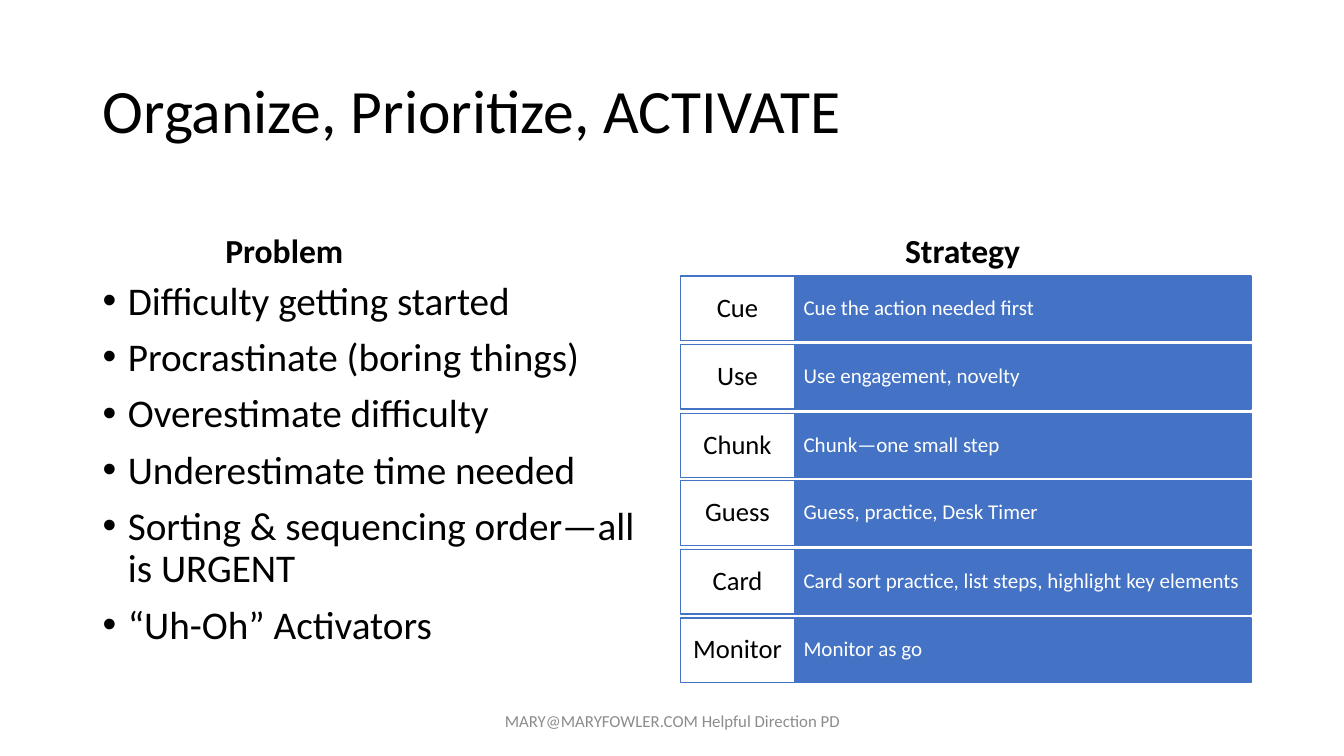
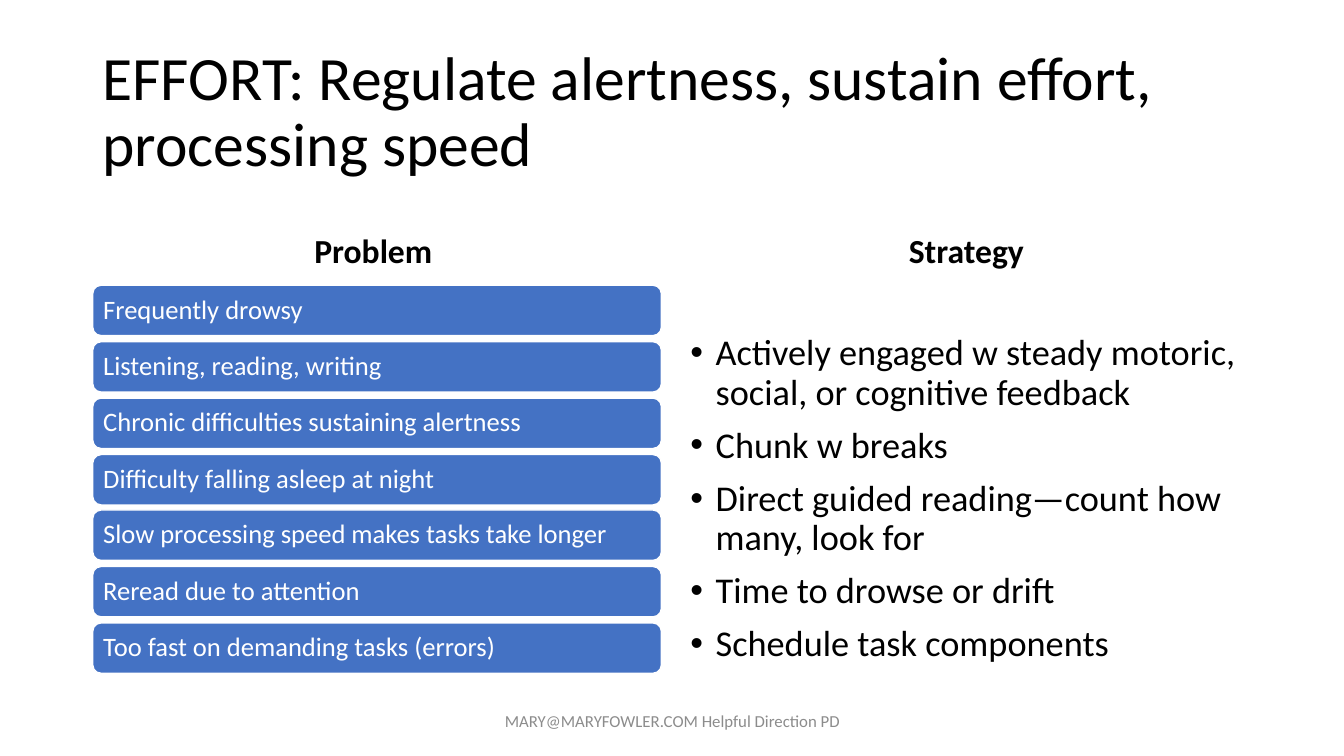
from lxml import etree
from pptx import Presentation
from pptx.dml.color import RGBColor
from pptx.enum.shapes import MSO_SHAPE
from pptx.enum.text import MSO_ANCHOR, PP_ALIGN
from pptx.oxml.ns import qn
from pptx.util import Emu, Pt

BLACK = RGBColor(0x00, 0x00, 0x00)
WHITE = RGBColor(0xFF, 0xFF, 0xFF)
BLUE = RGBColor(0x44, 0x72, 0xC4)
GRAY = RGBColor(0x8C, 0x8C, 0x8C)

LEFT, CENTER = PP_ALIGN.LEFT, PP_ALIGN.CENTER
TOP, MIDDLE, BOTTOM = MSO_ANCHOR.TOP, MSO_ANCHOR.MIDDLE, MSO_ANCHOR.BOTTOM
RECTANGLE, ROUNDED = MSO_SHAPE.RECTANGLE, MSO_SHAPE.ROUNDED_RECTANGLE

FONT = "Calibri"
FOOTER = "MARY@MARYFOWLER.COM Helpful Direction PD"
EMU_PER_PX = 9144
LEFT_COLUMN, LEFT_WIDTH = 92, 564
RIGHT_COLUMN, RIGHT_WIDTH = 675, 567
BODY_TOP, BODY_BOTTOM = 274, 677

ACTIVATION_PROBLEMS = [
    "Difficulty getting started",
    "Procrastinate (boring things)",
    "Overestimate difficulty",
    "Underestimate time needed",
    "Sorting & sequencing order—all is URGENT",
    "“Uh-Oh” Activators",
]
ACTIVATION_STRATEGIES = [
    ("Cue", "Cue the action needed first"),
    ("Use", "Use engagement, novelty"),
    ("Chunk", "Chunk—one small step"),
    ("Guess", "Guess, practice, Desk Timer"),
    ("Card", "Card sort practice, list steps, highlight key elements"),
    ("Monitor", "Monitor as go"),
]
EFFORT_PROBLEMS = [
    "Frequently drowsy",
    "Listening, reading, writing",
    "Chronic difficulties sustaining alertness",
    "Difficulty falling asleep at night",
    "Slow processing speed makes tasks take longer",
    "Reread due to attention",
    "Too fast on demanding tasks (errors)",
]
EFFORT_STRATEGIES = [
    "Actively engaged w steady motoric, social, or cognitive feedback",
    "Chunk w breaks",
    "Direct guided reading—count how many, look for",
    "Time to drowse or drift",
    "Schedule task components",
]


def px(length):
    return Emu(length * EMU_PER_PX)


def spread(first, last, count):
    return [first + round((last - first) * index / (count - 1)) for index in range(count)]


class Deck:
    """Holds the shared style and the slide being built."""

    def __init__(self):
        self.presentation = Presentation()
        self.presentation.slide_width = px(1333)
        self.presentation.slide_height = px(750)
        self.slide = None

    def new_slide(self, title):
        self.slide = self.presentation.slides.add_slide(self.presentation.slide_layouts[6])
        self.text((92, 40, 1150, 145), [title], 44)
        self.text((442, 695, 450, 40), [FOOTER], 12, GRAY, CENTER, line_spacing=1.0)

    def fill_frame(self, frame, lines, size, color, align, anchor, line_spacing=0.9, bold=False):
        frame.word_wrap = True
        frame.vertical_anchor = anchor
        for index, line in enumerate(lines):
            paragraph = frame.add_paragraph() if index else frame.paragraphs[0]
            paragraph.alignment = align
            paragraph.line_spacing = line_spacing
            run = paragraph.add_run()
            run.text = line
            run.font.name = FONT
            run.font.size = Pt(size)
            run.font.bold = bold
            run.font.color.rgb = color

    def text(self, box, lines, size, color=BLACK, align=LEFT, anchor=MIDDLE, **style):
        frame = self.slide.shapes.add_textbox(*map(px, box)).text_frame
        self.fill_frame(frame, lines, size, color, align, anchor, **style)
        return frame

    def heading(self, left, width, label):
        self.text((left, 184, width, 90), [label], 24, BLACK, CENTER, BOTTOM, bold=True)

    def bullets(self, left, top, width, lines, size):
        frame = self.text((left, top, width, BODY_BOTTOM - top), lines, size, anchor=TOP)
        for paragraph in frame.paragraphs:
            paragraph.space_before = Pt(10)
            properties = paragraph._p.get_or_add_pPr()
            properties.set("marL", str(px(25)))
            properties.set("indent", str(px(-25)))
            etree.SubElement(properties, qn("a:buFont")).set("typeface", "Arial")
            etree.SubElement(properties, qn("a:buChar")).set("char", "•")

    def block(self, kind, box, label, size, color, fill, line, inset, align=LEFT):
        shape = self.slide.shapes.add_shape(kind, *map(px, box))
        shape.shadow.inherit = False
        shape.fill.solid()
        shape.fill.fore_color.rgb = fill
        shape.line.color.rgb = line
        shape.line.width = Pt(1)
        frame = shape.text_frame
        frame.margin_left = frame.margin_right = px(inset)
        frame.margin_top = frame.margin_bottom = px(6)
        self.fill_frame(frame, [label], size, color, align, MIDDLE)

    def strategy_rows(self, rows):
        for top, (cue, action) in zip(spread(BODY_TOP, 613, len(rows)), rows):
            self.block(RECTANGLE, (788, top, 453, 64), action, 15, WHITE, BLUE, BLUE, 9)
            self.block(RECTANGLE, (RIGHT_COLUMN, top, 113, 64), cue, 19, BLACK, WHITE, BLUE, 6, CENTER)

    def problem_bars(self, labels):
        for top, label in zip(spread(283, 618, len(labels)), labels):
            self.block(ROUNDED, (LEFT_COLUMN, top, LEFT_WIDTH, 50), label, 19, WHITE, BLUE, WHITE, 8)


def main():
    deck = Deck()

    deck.new_slide("Organize, Prioritize, ACTIVATE")
    deck.heading(LEFT_COLUMN, 380, "Problem")
    deck.bullets(LEFT_COLUMN, BODY_TOP, LEFT_WIDTH, ACTIVATION_PROBLEMS, 28)
    deck.heading(RIGHT_COLUMN, RIGHT_WIDTH, "Strategy ")
    deck.strategy_rows(ACTIVATION_STRATEGIES)

    deck.new_slide("EFFORT: Regulate alertness, sustain effort, processing speed")
    deck.heading(LEFT_COLUMN, LEFT_WIDTH, "Problem ")
    deck.problem_bars(EFFORT_PROBLEMS)
    deck.heading(RIGHT_COLUMN, RIGHT_WIDTH, "Strategy")
    deck.bullets(RIGHT_COLUMN, 327, RIGHT_WIDTH, EFFORT_STRATEGIES, 25.9)

    deck.presentation.save("out.pptx")


if __name__ == "__main__":
    main()
